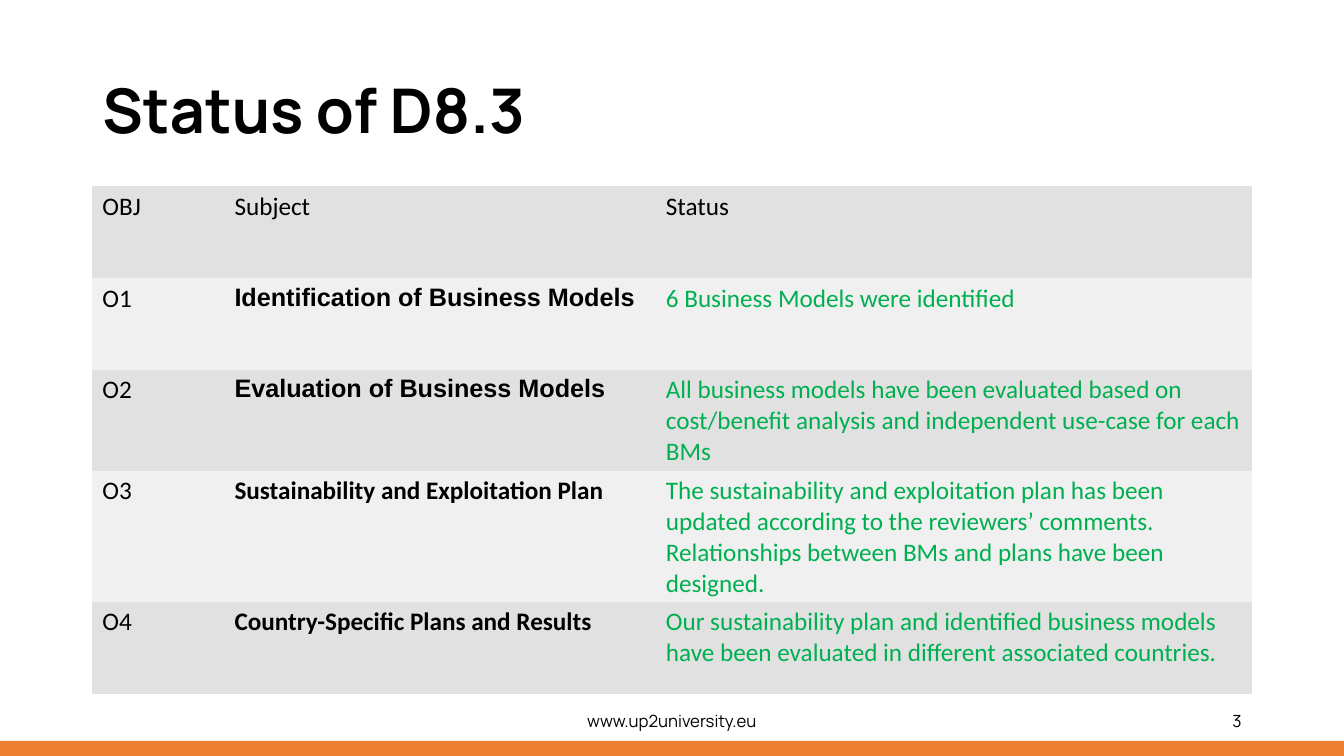
"""Build the D8.3 status slide: title, objectives table, footer and accent bar."""
from dataclasses import dataclass

from pptx import Presentation
from pptx.dml.color import RGBColor
from pptx.enum.shapes import MSO_SHAPE
from pptx.enum.text import MSO_ANCHOR, PP_ALIGN
from pptx.oxml.ns import qn
from pptx.slide import Slide
from pptx.text.text import TextFrame
from pptx.util import Emu, Inches, Pt

RECTANGLE = MSO_SHAPE.RECTANGLE
MIDDLE = MSO_ANCHOR.MIDDLE
LEFT, CENTER, RIGHT = PP_ALIGN.LEFT, PP_ALIGN.CENTER, PP_ALIGN.RIGHT

GRID_COLUMNS, GRID_ROWS = 160, 150
COLUMN = Inches(13.333) / GRID_COLUMNS
ROW = Inches(7.5) / GRID_ROWS
TITLE_ONLY_LAYOUT = 5
PLAIN_TABLE_STYLE = "{2D5ABB26-0587-4C30-8999-92F81FD0307C}"


@dataclass(frozen=True)
class Theme:
    """Colours, fonts and type sizes of the slide."""
    accent: RGBColor = RGBColor(0xED, 0x7D, 0x31)
    ink: RGBColor = RGBColor(0, 0, 0)
    done: RGBColor = RGBColor(0x00, 0xB0, 0x50)
    bands: tuple[RGBColor, RGBColor] = (RGBColor(0xE1, 0xE1, 0xE1), RGBColor(0xF0, 0xF0, 0xF0))
    display_font: str = "Manrope"
    table_font: str = "Calibri"
    subject_font: str = "Arial"
    title_size: int = 44
    table_size: int = 18
    footer_size: int = 12


THEME = Theme()


@dataclass(frozen=True)
class Area:
    """A rectangle measured in grid columns and rows."""
    left: float
    top: float
    width: float
    height: float

    def box(self) -> tuple[Emu, Emu, Emu, Emu]:
        """Return left, top, width and height as lengths."""
        return (Emu(round(self.left * COLUMN)), Emu(round(self.top * ROW)),
                Emu(round(self.width * COLUMN)), Emu(round(self.height * ROW)))


@dataclass(frozen=True)
class TextStyle:
    """Character and paragraph formatting."""
    font: str
    size: int
    color: RGBColor = THEME.ink
    bold: bool = False
    alignment: PP_ALIGN = LEFT
    line_spacing: float | None = None


@dataclass(frozen=True)
class FooterItem:
    """A text shown at the foot of the slide."""
    text: str
    area: Area
    alignment: PP_ALIGN


@dataclass(frozen=True)
class Objective:
    """One table row below the header."""
    code: str
    subject: str
    status: str
    subject_font: str = THEME.table_font


TITLE_AREA = Area(11, 8, 121, 29)
TABLE_AREA = Area(11, 37, 138, 91)
BAR_AREA = Area(0, 147, GRID_COLUMNS, 3)
TABLE_COLUMNS = (15.72, 51.36, 70.92)
HEADER = ("OBJ", "Subject", "Status")
OBJECTIVES = (
    Objective("O1", "Identification of Business Models",
              "6 Business Models were identified", THEME.subject_font),
    Objective("O2", "Evaluation of Business Models",
              "All business models have been evaluated based on cost/benefit analysis "
              "and independent use-case for each BMs", THEME.subject_font),
    Objective("O3", "Sustainability and Exploitation Plan",
              "The sustainability and exploitation plan has been updated according to the "
              "reviewers’ comments. Relationships between BMs and plans have been designed."),
    Objective("O4", "Country-Specific Plans and Results",
              "Our sustainability plan and identified business models have been evaluated "
              "in different associated countries."),
)
FOOTER = (
    FooterItem("www.up2university.eu", Area(53, 139, 54, 8), CENTER),
    FooterItem("3", Area(113, 139, 36, 8), RIGHT),
)


def write(frame: TextFrame, text: str, style: TextStyle) -> None:
    """Put one styled paragraph into a text frame."""
    frame.text = text
    paragraph = frame.paragraphs[0]
    paragraph.alignment = style.alignment
    paragraph.line_spacing = style.line_spacing
    font = paragraph.font
    font.name, font.size, font.bold = style.font, Pt(style.size), style.bold
    font.color.rgb = style.color


def add_bar(slide: Slide) -> None:
    """Draw the accent bar along the bottom edge."""
    bar = slide.shapes.add_shape(RECTANGLE, *BAR_AREA.box())
    bar.shadow.inherit = False
    bar.fill.solid()
    bar.fill.fore_color.rgb = THEME.accent
    bar.line.fill.background()


def set_title(slide: Slide, text: str) -> None:
    """Place and format the title placeholder."""
    title = slide.shapes.title
    title.left, title.top, title.width, title.height = TITLE_AREA.box()
    title.text_frame.vertical_anchor = MIDDLE
    write(title.text_frame, text,
          TextStyle(THEME.display_font, THEME.title_size, bold=True, line_spacing=0.9))


def add_footer_item(slide: Slide, item: FooterItem) -> None:
    """Add one footer text box."""
    frame = slide.shapes.add_textbox(*item.area.box()).text_frame
    frame.word_wrap = True
    frame.vertical_anchor = MIDDLE
    write(frame, item.text,
          TextStyle(THEME.display_font, THEME.footer_size, alignment=item.alignment))


def add_status_table(slide: Slide) -> None:
    """Add the banded table of objectives."""
    table = slide.shapes.add_table(
        len(OBJECTIVES) + 1, len(HEADER), *TABLE_AREA.box()).table
    table.first_row = table.horz_banding = False
    table._tbl.tblPr.find(qn("a:tableStyleId")).text = PLAIN_TABLE_STYLE
    for column, width in zip(table.columns, TABLE_COLUMNS):
        column.width = Emu(round(width * COLUMN))

    plain = TextStyle(THEME.table_font, THEME.table_size)
    status = TextStyle(THEME.table_font, THEME.table_size, THEME.done)
    rows = [[(text, plain) for text in HEADER]]
    for objective in OBJECTIVES:
        subject = TextStyle(objective.subject_font, THEME.table_size, bold=True)
        rows.append([(objective.code, plain), (objective.subject, subject),
                     (objective.status, status)])
    for row_index, row in enumerate(rows):
        for column_index, (text, style) in enumerate(row):
            cell = table.cell(row_index, column_index)
            cell.fill.solid()
            cell.fill.fore_color.rgb = THEME.bands[row_index % 2]
            write(cell.text_frame, text, style)


def main() -> None:
    """Assemble and save the presentation."""
    presentation = Presentation()
    presentation.slide_width = Emu(round(GRID_COLUMNS * COLUMN))
    presentation.slide_height = Emu(round(GRID_ROWS * ROW))
    slide = presentation.slides.add_slide(presentation.slide_layouts[TITLE_ONLY_LAYOUT])
    add_bar(slide)
    set_title(slide, "Status of D8.3")
    for item in FOOTER:
        add_footer_item(slide, item)
    add_status_table(slide)
    presentation.save("out.pptx")


if __name__ == "__main__":
    main()
